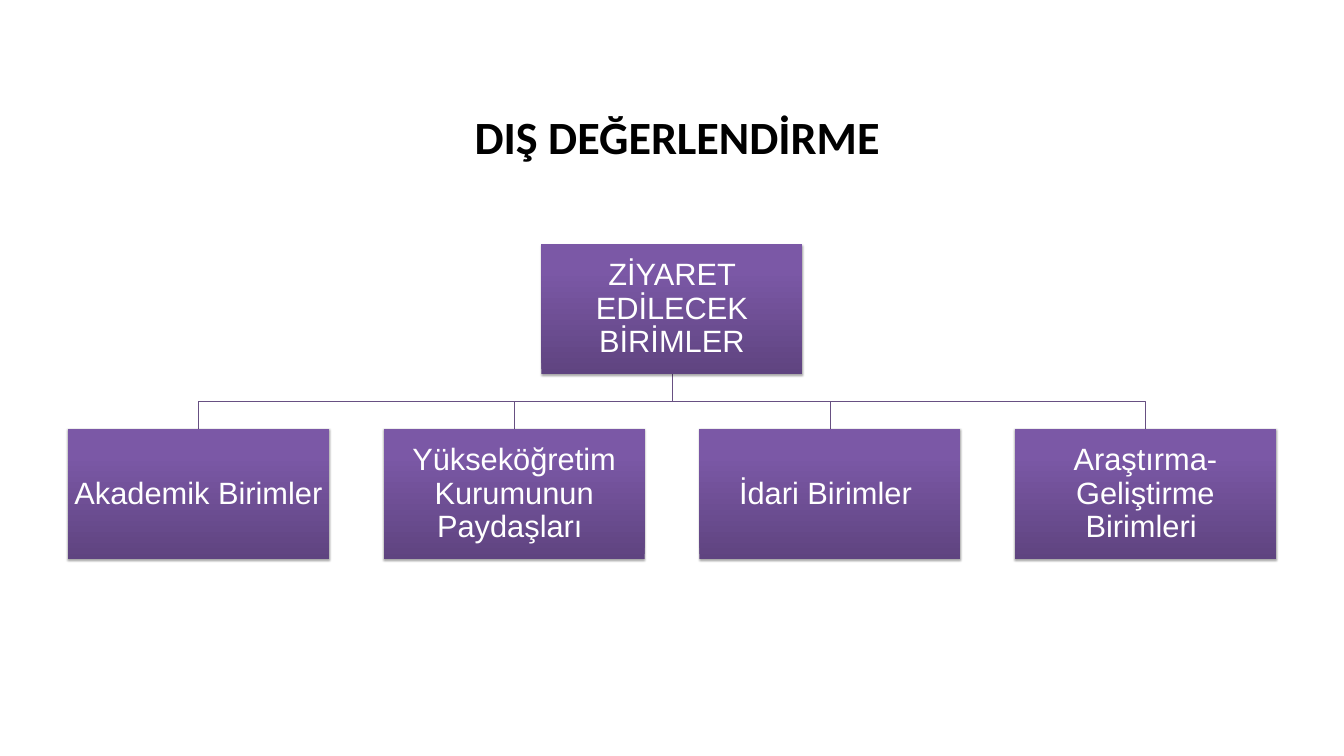
import copy

import lxml.etree
import pptx
import pptx.dml.color
import pptx.enum.shapes
import pptx.enum.text
import pptx.oxml.ns
import pptx.util

Inches = pptx.util.Inches
Pt = pptx.util.Pt
RGBColor = pptx.dml.color.RGBColor
qn = pptx.oxml.ns.qn

BLACK = RGBColor(0x00, 0x00, 0x00)
WHITE = RGBColor(0xFF, 0xFF, 0xFF)
BRANCH_PURPLE = RGBColor(0x67, 0x50, 0x82)
UNIT_GRADIENT = [
    (0, RGBColor(0x5F, 0x44, 0x80)),
    (0.8, RGBColor(0x7B, 0x58, 0xA6)),
    (1, RGBColor(0x7C, 0x57, 0xA8)),
]

UNIT_WIDTH = Inches(5.18)
UNIT_HEIGHT = Inches(2.59)
UNITS = [
    "Akademik Birimler",
    "Yükseköğretim Kurumunun Paydaşları ",
    "İdari Birimler ",
    "Araştırma-Geliştirme Birimleri ",
]


def write_text(shape, text, *, font, size, color, bold=False,
               inset_x=0.03, inset_y=0.03, line_spacing=None):
    frame = shape.text_frame
    frame.word_wrap = True
    frame.vertical_anchor = pptx.enum.text.MSO_ANCHOR.MIDDLE
    frame.margin_left = frame.margin_right = Inches(inset_x)
    frame.margin_top = frame.margin_bottom = Inches(inset_y)
    paragraph = frame.paragraphs[0]
    paragraph.alignment = pptx.enum.text.PP_ALIGN.CENTER
    paragraph.line_spacing = line_spacing
    run = paragraph.add_run()
    run.text = text
    run.font.name = font
    run.font.size = Pt(size)
    run.font.bold = bold
    run.font.color.rgb = color


def fill_gradient(shape):
    shape.fill.gradient()
    shape.fill.gradient_angle = 90
    stop_list = shape.fill._fill._gradFill.find(qn("a:gsLst"))
    stop_list.append(copy.deepcopy(stop_list[-1]))
    for stop, (position, color) in zip(shape.fill.gradient_stops, UNIT_GRADIENT):
        stop.position = position
        stop.color.rgb = color


def cast_shadow(shape):
    shape.shadow.inherit = False
    effects = shape._element.spPr.find(qn("a:effectLst"))
    shadow = lxml.etree.SubElement(
        effects, qn("a:outerShdw"), blurRad=str(Pt(3.1)), dist=str(Pt(1.8)),
        dir="5400000", rotWithShape="0")
    color = lxml.etree.SubElement(shadow, qn("a:srgbClr"), val="000000")
    lxml.etree.SubElement(color, qn("a:alpha"), val="35000")


def add_title(slide, left, top, width, height):
    title = slide.shapes.add_textbox(left, top, width, height)
    write_text(title, "DIŞ DEĞERLENDİRME", font="Calibri", size=66,
               color=BLACK, bold=True, inset_x=0.24, inset_y=0.12)


def add_unit(slide, text, left, top):
    unit = slide.shapes.add_shape(
        pptx.enum.shapes.MSO_SHAPE.RECTANGLE, left, top, UNIT_WIDTH, UNIT_HEIGHT)
    fill_gradient(unit)
    unit.line.fill.background()
    cast_shadow(unit)
    write_text(unit, text, font="Arial", size=44, color=WHITE, line_spacing=0.9)


def add_branch(slide, start_x, start_y, end_x, end_y):
    middle_y = (start_y + end_y) // 2
    builder = slide.shapes.build_freeform(start_x, start_y)
    builder.add_line_segments(
        [(start_x, middle_y), (end_x, middle_y), (end_x, end_y)], close=False)
    branch = builder.convert_to_shape()
    branch.shadow.inherit = False
    branch.fill.background()
    branch.line.color.rgb = BRANCH_PURPLE
    branch.line.width = Pt(0.75)


def add_unit_tree(slide, left, top, width, height):
    center_x = left + width // 2
    units_top = top + height - UNIT_HEIGHT
    step = (width - UNIT_WIDTH) // (len(UNITS) - 1)
    unit_lefts = [left + index * step for index in range(len(UNITS))]
    for unit_left in unit_lefts:
        add_branch(slide, center_x, top + UNIT_HEIGHT,
                   unit_left + UNIT_WIDTH // 2, units_top)
    add_unit(slide, "ZİYARET EDİLECEK BİRİMLER", center_x - UNIT_WIDTH // 2, top)
    for text, unit_left in zip(UNITS, unit_lefts):
        add_unit(slide, text, unit_left, units_top)


def main():
    presentation = pptx.Presentation()
    presentation.slide_width = Inches(26.67)
    presentation.slide_height = Inches(15)
    slide = presentation.slides.add_slide(presentation.slide_layouts[6])
    add_unit_tree(slide, Inches(1.35), Inches(4.84), Inches(23.97), Inches(6.26))
    add_title(slide, Inches(1.44), Inches(1.44), Inches(24), Inches(2.5))
    presentation.save("out.pptx")


if __name__ == "__main__":
    main()
